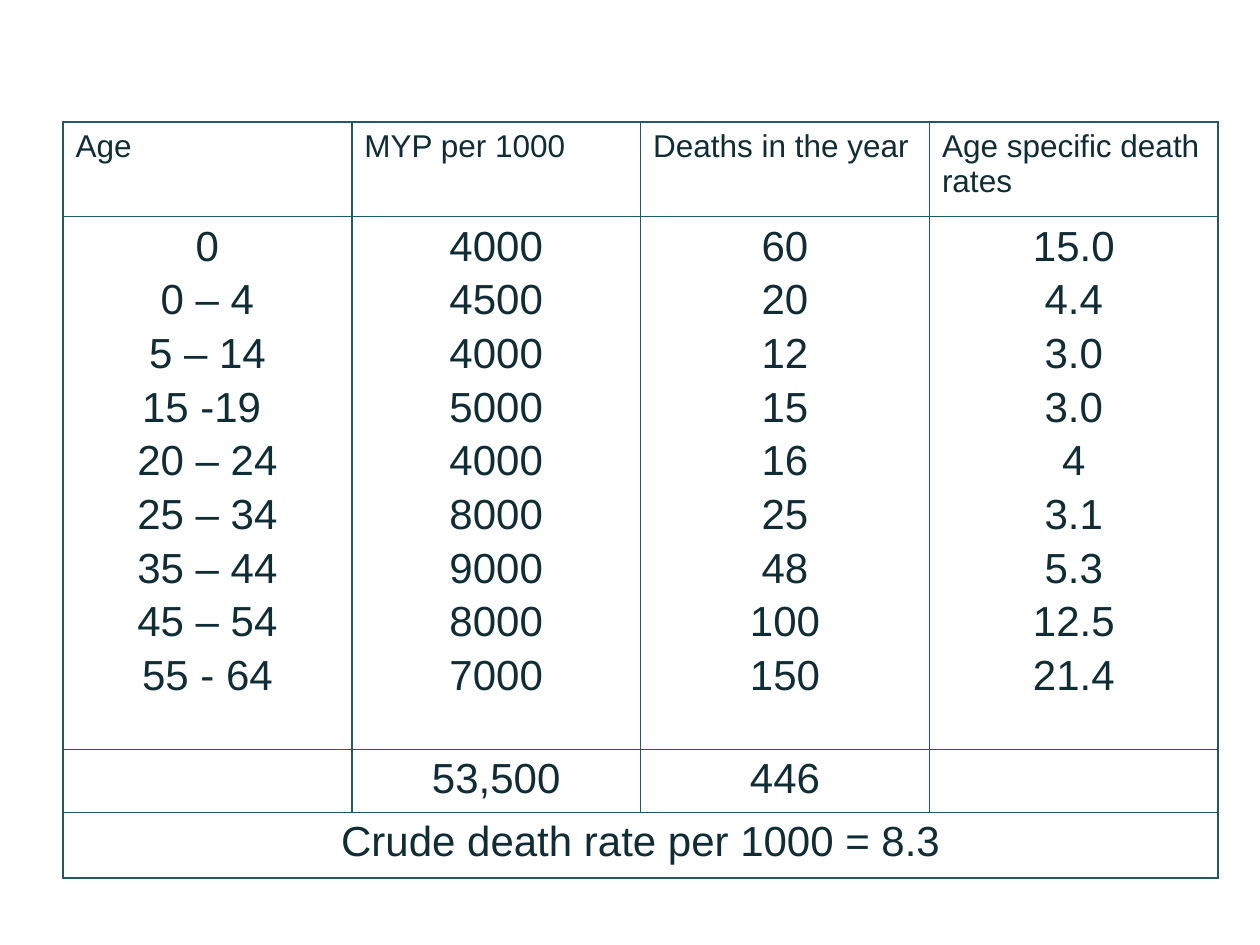
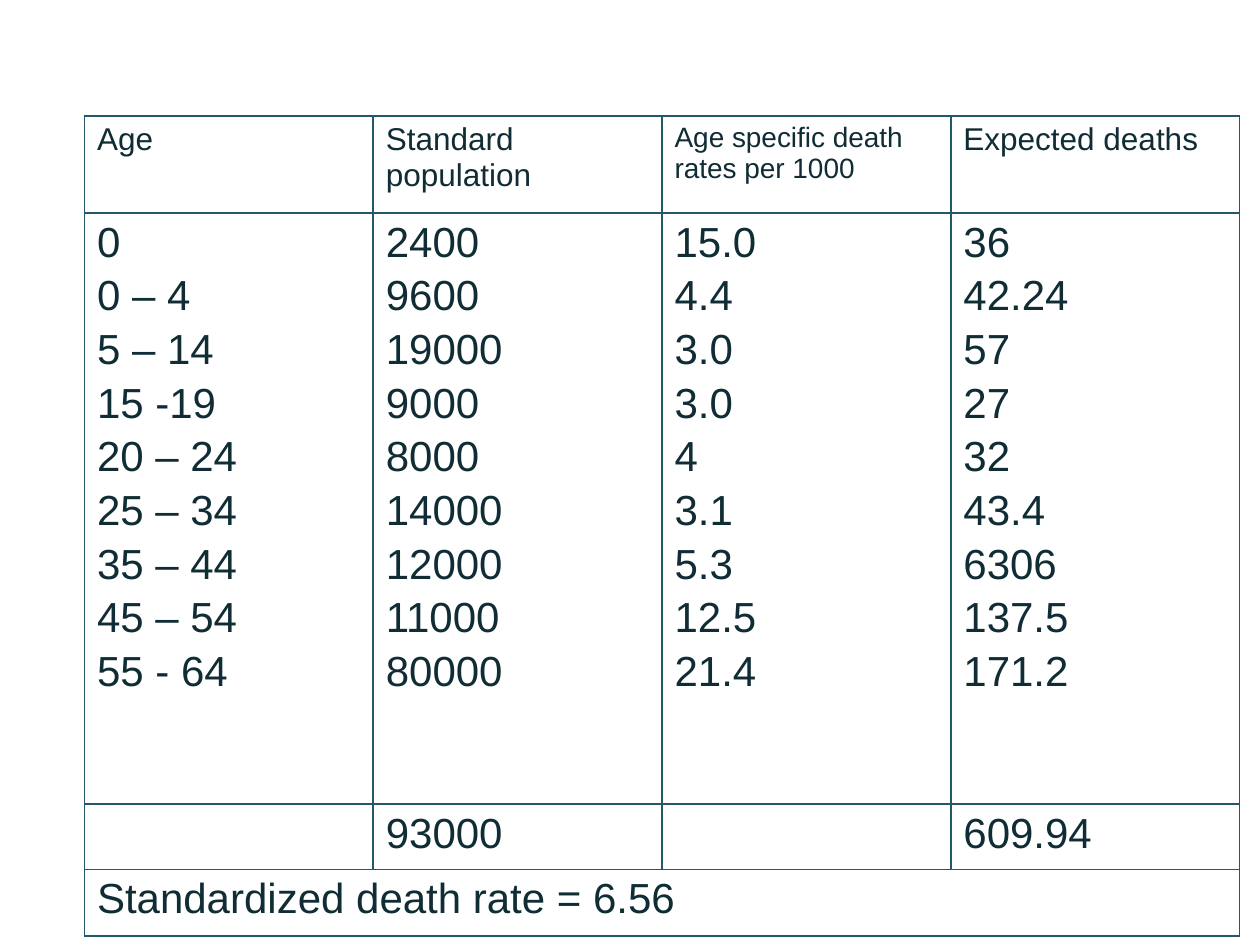
"""Builds two slides with tables of crude and standardized death rates."""
from lxml import etree
from pptx import Presentation
from pptx.dml.color import RGBColor
from pptx.enum.text import PP_ALIGN
from pptx.oxml.ns import qn
from pptx.util import Inches, Pt

LEFT, CENTER = PP_ALIGN.LEFT, PP_ALIGN.CENTER
BLANK_LAYOUT = 6
AGES = ["0", "0 – 4", "5 – 14", "15 -19", "20 – 24", "25 – 34", "35 – 44", "45 – 54", "55 - 64"]
CENTERED_AGES = [age + " " if age == "15 -19" else age for age in AGES]
DEATH_RATES = ["15.0", "4.4", "3.0", "3.0", "4", "3.1", "5.3", "12.5", "21.4"]


def color(hex_value):
    """Return the colour for a hex string."""
    return RGBColor.from_string(hex_value)


class SlideBuilder:
    """Holds the shared style and the slide being built."""

    font_name = "Arial"
    text_color = "102C34"
    border_color = "215968"
    border_width = Pt(1)
    header_size, body_size = 18, 24
    line_gap = Pt(3.9)
    table_width = Inches(9.17)

    def __init__(self, presentation):
        """Keep the presentation that receives the slides."""
        self.presentation = presentation
        self.slide = None

    def new_slide(self):
        """Start an empty slide."""
        layout = self.presentation.slide_layouts[BLANK_LAYOUT]
        self.slide = self.presentation.slides.add_slide(layout)

    def border(self, cell):
        """Draw a solid line on all four sides of a cell."""
        properties = cell._tc.get_or_add_tcPr()
        for index, side in enumerate(("a:lnL", "a:lnR", "a:lnT", "a:lnB")):
            line = etree.Element(qn(side), w=str(self.border_width))
            fill = etree.SubElement(line, qn("a:solidFill"))
            etree.SubElement(fill, qn("a:srgbClr"), val=self.border_color)
            properties.insert(index, line)

    def cell_text(self, cell, lines, size, alignment):
        """Put one paragraph per line into a cell."""
        frame = cell.text_frame
        frame.text = "\n".join(lines)
        font_format = {"name": self.font_name, "size": Pt(size), "bold": False}
        for index, paragraph in enumerate(frame.paragraphs):
            paragraph.alignment = alignment
            if index:
                paragraph.space_before = self.line_gap
            for name, value in font_format.items():
                setattr(paragraph.font, name, value)
            paragraph.font.color.rgb = color(self.text_color)

    def rate_table(self, left, top, row_heights, headers, columns, totals, result,
                   alignment=LEFT, header_sizes=None):
        """Add a table of headers, value columns, totals and a merged result row."""
        rows = [[[header] for header in headers], columns,
                [[total] for total in totals], [[result], [], [], []]]
        heights = [Inches(height) for height in row_heights]
        table = self.slide.shapes.add_table(
            len(rows), len(headers), Inches(left), Inches(top),
            self.table_width, sum(heights)).table
        table.first_row = table.horz_banding = False
        for row, height in zip(table.rows, heights):
            row.height = height
        for row_index, row in enumerate(rows):
            for column_index, lines in enumerate(row):
                cell = table.cell(row_index, column_index)
                cell.fill.background()
                self.border(cell)
                if row_index:
                    self.cell_text(cell, lines, self.body_size, alignment)
                else:
                    size = (header_sizes or {}).get(column_index, self.header_size)
                    self.cell_text(cell, lines, size, LEFT)
        last_row = len(rows) - 1
        table.cell(last_row, 0).merge(table.cell(last_row, len(headers) - 1))


def main():
    """Build and save the presentation."""
    presentation = Presentation()
    presentation.slide_width, presentation.slide_height = Inches(10), Inches(7.5)
    builder = SlideBuilder(presentation)

    builder.new_slide()
    builder.rate_table(
        0.5, 0.97, [0.75, 4.23, 0.5, 0.52],
        ["Age", "MYP per 1000", "Deaths in the year", "Age specific death rates"],
        [CENTERED_AGES,
         ["4000", "4500", "4000", "5000", "4000", "8000", "9000", "8000", "7000"],
         ["60", "20", "12", "15", "16", "25", "48", "100", "150"],
         DEATH_RATES],
        ["", "53,500", "446", ""], "Crude death rate per 1000 = 8.3", alignment=CENTER)

    builder.new_slide()
    builder.rate_table(
        0.67, 0.92, [0.77, 4.69, 0.52, 0.53],
        ["Age", "Standard population", "Age specific death rates per 1000", "Expected deaths"],
        [AGES,
         ["2400", "9600", "19000", "9000", "8000", "14000", "12000", "11000", "80000"],
         DEATH_RATES,
         ["36", "42.24", "57", "27", "32", "43.4", "6306", "137.5", "171.2"]],
        ["", "93000", "", "609.94"], "Standardized death rate = 6.56", header_sizes={2: 16})

    presentation.save("out.pptx")


if __name__ == "__main__":
    main()
